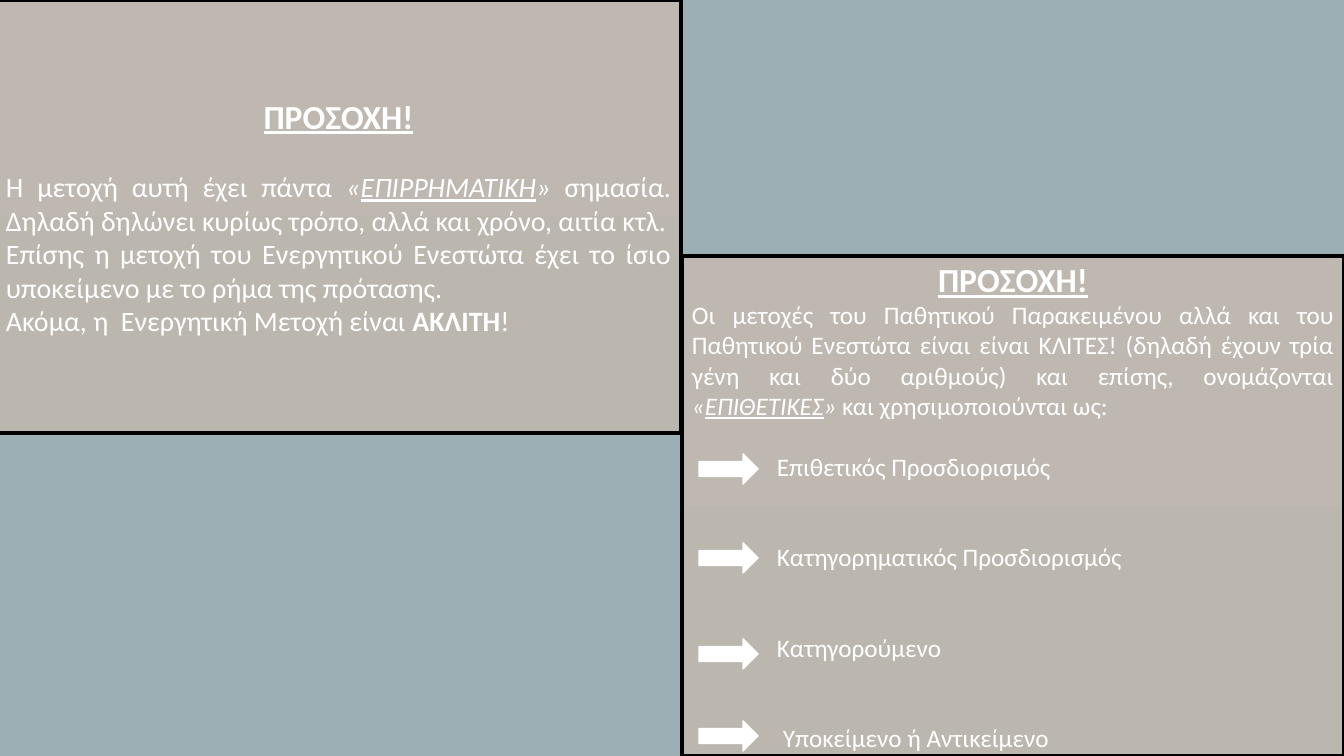
from dataclasses import dataclass

from pptx import Presentation
from pptx.dml.color import RGBColor
from pptx.enum.shapes import MSO_SHAPE
from pptx.enum.text import MSO_ANCHOR, PP_ALIGN
from pptx.util import Pt

PX = 9525 * 96 / 100.8
RECTANGLE, RIGHT_ARROW = MSO_SHAPE.RECTANGLE, MSO_SHAPE.RIGHT_ARROW
CENTER, JUSTIFY, LEFT = PP_ALIGN.CENTER, PP_ALIGN.JUSTIFY, PP_ALIGN.LEFT
MIDDLE = MSO_ANCHOR.MIDDLE


@dataclass(frozen=True)
class Theme:
    background = RGBColor.from_string("9BAFB5")
    panel_top = RGBColor.from_string("BEB8B1")
    panel_bottom = RGBColor.from_string("BBB6AE")
    border = RGBColor.from_string("000000")
    text = RGBColor.from_string("FFFFFF")
    font = "Calibri"
    heading_size = 24
    adverbial_size = 20
    adjectival_size = 18


theme = Theme()


def px(length):
    return round(length * PX)


def add_paragraph(frame, runs, size, alignment, space_before=0, indent=0):
    """Runs are (text, style) pairs; style holds any of the letters b, i, u."""
    first = not frame.paragraphs[0].runs
    paragraph = frame.paragraphs[0] if first else frame.add_paragraph()
    paragraph.alignment = alignment
    paragraph.space_before = Pt(space_before)
    paragraph._p.get_or_add_pPr().set("marL", str(px(indent)))
    for text, style in runs:
        run = paragraph.add_run()
        run.text = text
        font = run.font
        font.name, font.size = theme.font, Pt(size)
        font.color.rgb = theme.text
        font.bold, font.italic, font.underline = (flag in style for flag in "biu")


presentation = Presentation()
presentation.slide_width, presentation.slide_height = px(1344), px(756)
slide = presentation.slides.add_slide(presentation.slide_layouts[6])
slide.background.fill.solid()
slide.background.fill.fore_color.rgb = theme.background

# Panels, each opened by the same heading
frames = []
for left, top, width, height in ((-4, 0, 685, 433), (682, 256, 662, 500)):
    panel = slide.shapes.add_shape(RECTANGLE, px(left), px(top), px(width), px(height))
    panel.shadow.inherit = False
    panel.fill.gradient()
    panel.fill.gradient_angle = 270
    for stop, color in zip(panel.fill.gradient_stops, (theme.panel_top, theme.panel_bottom)):
        stop.color.rgb = color
    panel.line.color.rgb = theme.border
    panel.line.width = Pt(3)
    frame = panel.text_frame
    frame.word_wrap = True
    frame.vertical_anchor = MIDDLE
    add_paragraph(frame, [("ΠΡΟΣΟΧΗ!", "bu")], theme.heading_size, CENTER)
    frames.append(frame)
adverbial, adjectival = frames

# Active participle
size = theme.adverbial_size
add_paragraph(adverbial, [
    ("Η μετοχή αυτή έχει πάντα ", ""),
    ("«", "i"),
    ("ΕΠΙΡΡΗΜΑΤΙΚΗ", "iu"),
    ("» ", "i"),
    ("σημασία. Δηλαδή δηλώνει κυρίως τρόπο, αλλά και χρόνο, αιτία κτλ.", ""),
], size, JUSTIFY, space_before=24)
add_paragraph(adverbial, [
    ("Επίσης η μετοχή του Ενεργητικού Ενεστώτα έχει το ίσιο υποκείμενο "
     "με το ρήμα της πρότασης.", ""),
], size, JUSTIFY)
add_paragraph(adverbial, [
    ("Ακόμα, η  Ενεργητική Μετοχή είναι ", ""),
    ("ΑΚΛΙΤΗ", "b"),
    ("!", ""),
], size, JUSTIFY)

# Passive participles and their uses
size = theme.adjectival_size
add_paragraph(adjectival, [
    ("Οι μετοχές του Παθητικού Παρακειμένου αλλά και του Παθητικού Ενεστώτα "
     "είναι είναι ΚΛΙΤΕΣ! (δηλαδή έχουν τρία γένη και δύο αριθμούς) "
     "και επίσης, ονομάζονται ", ""),
    ("«", "i"),
    ("ΕΠΙΘΕΤΙΚΕΣ", "iu"),
    ("» ", "i"),
    ("και χρησιμοποιούνται ως:", ""),
], size, JUSTIFY)

uses = (
    ("Επιθετικός Προσδιορισμός", 22, 85, 454),
    ("Κατηγορηματικός Προσδιορισμός", 43, 85, 543),
    ("Κατηγορούμενο", 43, 85, 639),
    ("Υποκείμενο ή Αντικείμενο", 43, 91, 721),
)
for use, space_before, indent, arrow_top in uses:
    add_paragraph(adjectival, [(use, "")], size, LEFT, space_before, indent)
    arrow = slide.shapes.add_shape(RIGHT_ARROW, px(699), px(arrow_top), px(59), px(30))
    arrow.shadow.inherit = False
    arrow.fill.solid()
    arrow.fill.fore_color.rgb = theme.text
    arrow.line.color.rgb = theme.text
    arrow.line.width = Pt(1)

presentation.save("out.pptx")
